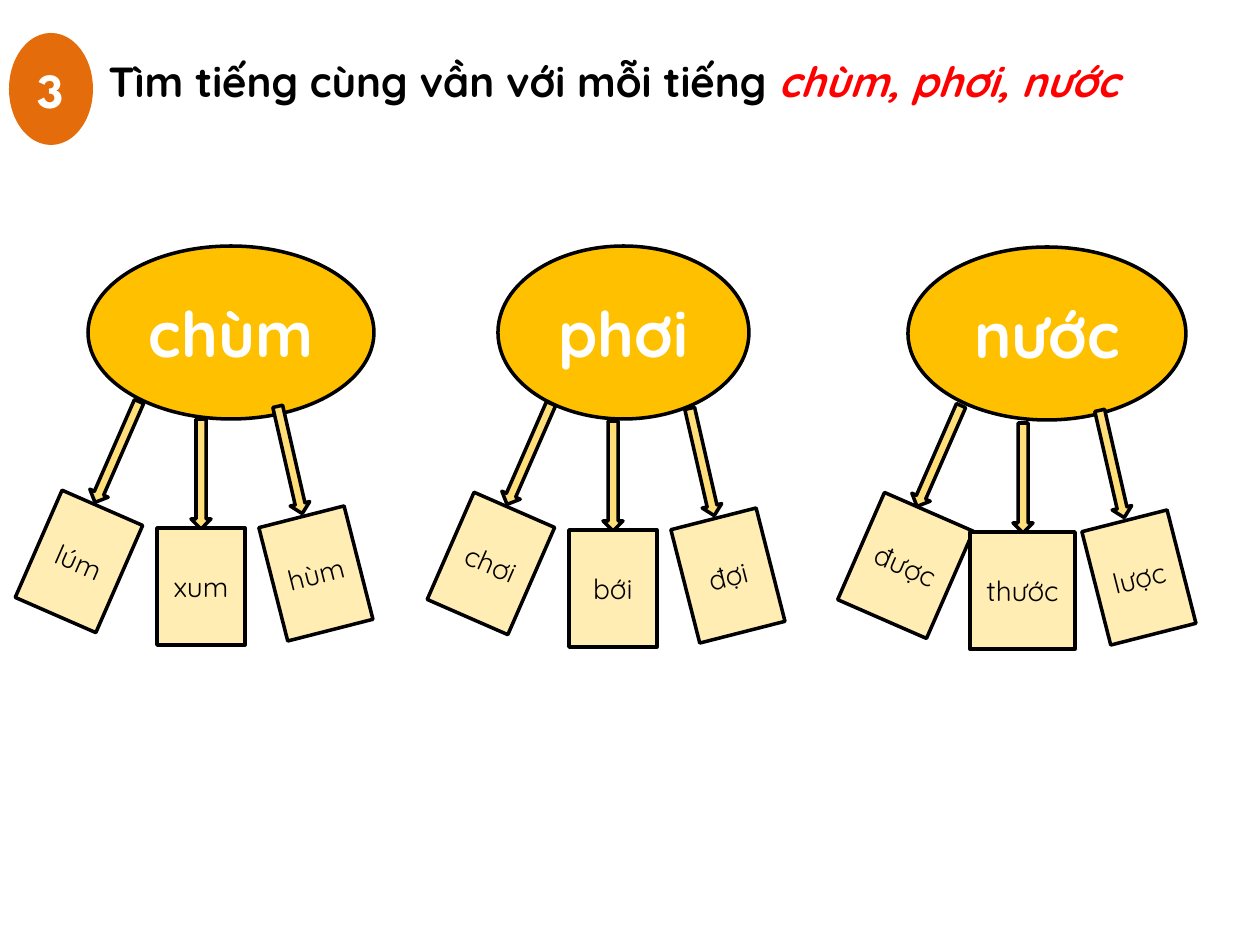
from pptx import Presentation
from pptx import util as u
from pptx.dml.color import RGBColor
from pptx.enum import shapes, text

PX = 914400 / 126  # EMU per px
COLORS = {
    "badge": "E46C0A", "oval": "FFC000", "arrow": "FFDF79", "card": "FFEDB3",
    "black": "000000", "white": "FFFFFF", "red": "FF0000",
}
KIND = shapes.MSO_SHAPE
ANGLES = (113.6, 90, 77.1)  # arrows, left to right
TILTS = (23.6, 0, 345.7)    # cards, left to right


def px(*values):
    return [u.Emu(round(v * PX)) for v in values]


def rgb(name):
    return RGBColor.from_string(COLORS[name])


def add_run(p, words, color, **fmt):
    r = p.add_run()
    r.text = words
    r.font.color.rgb = rgb(color)
    for key, value in fmt.items():
        setattr(r.font, key, value)


def add_part(s, kind, box, fill, line=True, rotation=0):
    sp = s.shapes.add_shape(kind, *px(*box))
    sp.shadow.inherit = False
    sp.rotation = rotation
    sp.fill.solid()
    sp.fill.fore_color.rgb = rgb(fill)
    if line:
        sp.line.color.rgb = rgb("black")
        sp.line.width = u.Pt(2)
    else:
        sp.line.fill.background()
    return sp


def add_label(sp, words, color, **fmt):
    tf = sp.text_frame
    tf.word_wrap = True
    tf.vertical_anchor = text.MSO_ANCHOR.MIDDLE
    p = tf.paragraphs[0]
    p.alignment = text.PP_ALIGN.CENTER
    add_run(p, words, color, **fmt)


def heading(s, x, y):
    # Number badge
    sp = add_part(s, KIND.OVAL, (x, y, 84, 112), "badge", line=False)
    add_label(sp, "3", "white", name="League Spartan", size=u.Pt(28), bold=True)
    # Task line
    tf = s.shapes.add_textbox(*px(x + 87, y + 16, 1155, 63)).text_frame
    tf.word_wrap = True
    p = tf.paragraphs[0]
    p.alignment = text.PP_ALIGN.JUSTIFY
    fmt = {"name": "Quicksand", "size": u.Pt(24), "bold": True}
    add_run(p, "Tìm tiếng cùng vần với mỗi tiếng ", "black", **fmt)
    add_run(p, "chùm, phơi, nước", "red", italic=True, **fmt)


def rhyme_group(s, x, y, oval, word, cards):
    # Source word
    sp = add_part(s, KIND.OVAL, oval, "oval")
    add_label(sp, word, "white", name="Quicksand", size=u.Pt(36), bold=True)
    # Arrows
    for dx, dy, angle in zip((27, 111, 200), (0, 22, 8), ANGLES):
        add_part(s, KIND.RIGHT_ARROW, (x + dx, y + dy, 110, 20), "arrow",
                 rotation=angle)
    # Rhyming words
    for (rhyme, dx, w), dy, tilt in zip(cards, (61, 86, 73), TILTS):
        sp = add_part(s, KIND.RECTANGLE, (x + dx, y + dy, w, 117), "card",
                      rotation=tilt)
        add_label(sp, rhyme, "black", name="Quicksand", size=u.Pt(16))


def main():
    prs = Presentation()
    prs.slide_width, prs.slide_height = px(1260, 945)
    s = prs.slides.add_slide(prs.slide_layouts[6])
    heading(s, 9, 33)
    rhyme_group(s, 35, 442, (88, 246, 286, 173), "chùm",
                [("lúm", 0, 88), ("xum", 122, 88), ("hùm", 237, 88)])
    rhyme_group(s, 447, 444, (498, 246, 251, 173), "phơi",
                [("chơi", 0, 88), ("bới", 122, 88), ("đợi", 237, 88)])
    rhyme_group(s, 857, 446, (908, 247, 278, 173), "nước",
                [("được", 0, 97), ("thước", 113, 105), ("lược", 238, 88)])
    prs.save("out.pptx")


if __name__ == "__main__":
    main()
